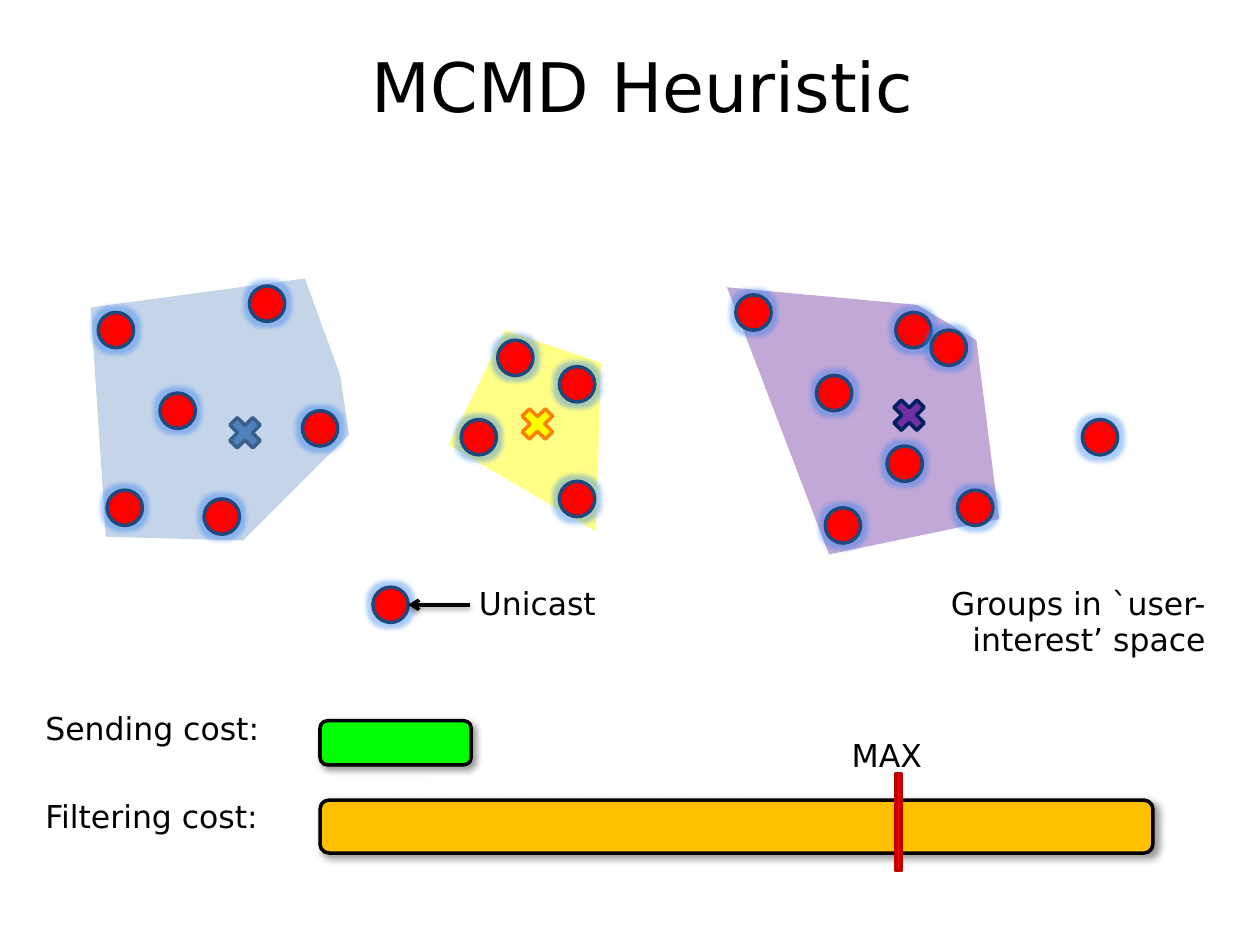
import pptx
import pptx.util
import pptx.dml.color
import pptx.enum.shapes
import pptx.enum.text
import pptx.oxml
import pptx.oxml.ns

Inches = pptx.util.Inches
Pt = pptx.util.Pt
KIND = pptx.enum.shapes.MSO_SHAPE
ALIGN = pptx.enum.text.PP_ALIGN
NS = pptx.oxml.ns.nsdecls("a")
DOT = 0.28
CROSS = 0.35


def color(text):
    return pptx.dml.color.RGBColor.from_string(text)


def write(frame, text, size=18, align=ALIGN.LEFT, font="DejaVu Sans", ink="000000"):
    frame.word_wrap = True
    frame.auto_size = pptx.enum.text.MSO_AUTO_SIZE.NONE
    frame.vertical_anchor = pptx.enum.text.MSO_ANCHOR.TOP
    frame.margin_left = frame.margin_right = 0
    frame.margin_top = frame.margin_bottom = 0
    para = frame.paragraphs[0]
    para.alignment = align
    para.line_spacing = 0.95
    run = para.add_run()
    run.text = text
    run.font.size = Pt(size)
    run.font.name = font
    run.font.color.rgb = color(ink)


def label(slide, box, text, **form):
    item = slide.shapes.add_textbox(*map(Inches, box))
    write(item.text_frame, text, **form)


def effect(props, body):
    """Put one effect into the shape's effect list, adding the list if needed."""
    found = props.find(pptx.oxml.ns.qn("a:effectLst"))
    if found is None:
        found = pptx.oxml.parse_xml(f"<a:effectLst {NS}/>")
        props.append(found)
    found.append(pptx.oxml.parse_xml(body))


def shadow(props, alpha, blur, dist, angle):
    effect(props, f'<a:outerShdw {NS} blurRad="{Pt(blur)}" dist="{Pt(dist)}" '
                  f'dir="{angle * 60000}" rotWithShape="0"><a:srgbClr val="000000">'
                  f'<a:alpha val="{alpha * 1000}"/></a:srgbClr></a:outerShdw>')


def shape(slide, kind, box, fill, edge):
    item = slide.shapes.add_shape(kind, *map(Inches, box))
    item.shadow.inherit = False
    item.fill.solid()
    item.fill.fore_color.rgb = color(fill)
    item.line.color.rgb = color(edge)
    item.line.width = Pt(2)
    return item


def dot(slide, x, y):
    item = shape(slide, KIND.OVAL, (x, y, DOT, DOT), "FF0000", "1F497D")
    effect(item._element.spPr,
           f'<a:glow {NS} rad="{Pt(5)}"><a:srgbClr val="2A80F0">'
           '<a:alpha val="40000"/></a:srgbClr></a:glow>')


def area(slide, x, y, points, fill, alpha):
    spots = [(Inches(x + dx), Inches(y + dy)) for dx, dy in points]
    path = slide.shapes.build_freeform(*spots[0])
    path.add_line_segments(spots[1:], close=True)
    item = path.convert_to_shape()
    item.shadow.inherit = False
    item.line.fill.background()
    item.fill.solid()
    item.fill.fore_color.rgb = color(fill)
    tone = item._element.spPr.find(".//" + pptx.oxml.ns.qn("a:srgbClr"))
    tone.append(pptx.oxml.parse_xml(f'<a:alpha {NS} val="{alpha * 1000}"/>'))


def cluster(slide, x, y, points, dots, cross, fill, edge, alpha):
    area(slide, x, y, points, fill, alpha)
    for dx, dy in dots:
        dot(slide, x + dx, y + dy)
    dx, dy = cross
    shape(slide, KIND.MATH_MULTIPLY, (x + dx, y + dy, CROSS, CROSS), fill, edge)


def legend(slide, x, y):
    dot(slide, x, y)
    mid = Inches(y + DOT / 2)
    arrow = slide.shapes.add_connector(
        pptx.enum.shapes.MSO_CONNECTOR.STRAIGHT,
        Inches(x + 0.77), mid, Inches(x + DOT), mid)
    arrow.line.color.rgb = color("000000")
    arrow.line.width = Pt(2)
    arrow.line._get_or_add_ln().append(
        pptx.oxml.parse_xml(f'<a:tailEnd {NS} type="arrow"/>'))
    shadow(arrow._element.spPr, 38, 3.1, 1.6, 90)
    label(slide, (x + 0.84, y, 1.41, 0.42), "Unicast")


def costs(slide, x, y):
    rows = (
        ("Sending cost:", 0, 0.07, 1.2, 0.35, "00FF00"),
        ("Filtering cost:", 0.7, 0.7, 6.61, 0.42, "FFC000"),
    )
    for text, top, drop, wide, high, fill in rows:
        label(slide, (x, y + top, 2.18, 0.42), text)
        bar = shape(slide, KIND.ROUNDED_RECTANGLE,
                    (x + 2.18, y + drop, wide, high), fill, "000000")
        shadow(bar._element.spPr, 40, 4, 3, 45)
    # Limit mark
    label(slide, (x + 6.4, y + 0.21, 0.7, 0.42), "MAX")
    shape(slide, KIND.RECTANGLE, (x + 6.75, y + 0.49, 0.04, 0.77), "FF0000", "C00000")


def heading(slide, box, text):
    title = slide.shapes.title
    title.left, title.top, title.width, title.height = map(Inches, box)
    write(title.text_frame, text, size=39, align=ALIGN.CENTER)


def main():
    deck = pptx.Presentation()
    deck.slide_width, deck.slide_height = Inches(10), Inches(7.5)
    slide = deck.slides.add_slide(deck.slide_layouts[5])
    heading(slide, (0.34, 0.4, 9.52, 0.9), "MCMD Heuristic")

    # Blue group
    cluster(slide, 0.72, 2.21,
            [(0, 0.23), (1.7, 0), (1.98, 0.77), (2.05, 1.24), (1.21, 2.08), (0.12, 2.05)],
            [(1.26, 0.06), (0.55, 0.91), (1.68, 1.05), (0.9, 1.75), (0.13, 1.68),
             (0.06, 0.27)],
            (1.05, 1.05), "4F81BD", "3A5F8C", 33)
    # Yellow group
    cluster(slide, 3.56, 2.62,
            [(0.45, 0), (0, 0.91), (1.17, 1.6), (1.21, 0.26)],
            [(0.39, 0.08), (0.1, 0.71), (0.88, 1.2), (0.88, 0.29)],
            (0.53, 0.57), "FFFF00", "F98007", 48)
    # Purple group
    cluster(slide, 5.77, 2.28,
            [(0, 0), (1.51, 0.14), (1.98, 0.42), (2.16, 1.84), (0.81, 2.12)],
            [(0.71, 0.7), (1.34, 0.2), (1.62, 0.34), (1.27, 1.26), (1.83, 1.61),
             (0.78, 1.75), (0.07, 0.06)],
            (1.27, 0.84), "7030A0", "002060", 42)
    # Lone receiver, legend and caption
    dot(slide, 8.59, 3.33)
    legend(slide, 2.96, 4.66)
    label(slide, (6.83, 4.66, 2.74, 0.7), "Groups in `user-interest’ space",
          align=ALIGN.RIGHT)
    # Cost bars
    costs(slide, 0.36, 5.65)
    deck.save("out.pptx")


if __name__ == "__main__":
    main()
